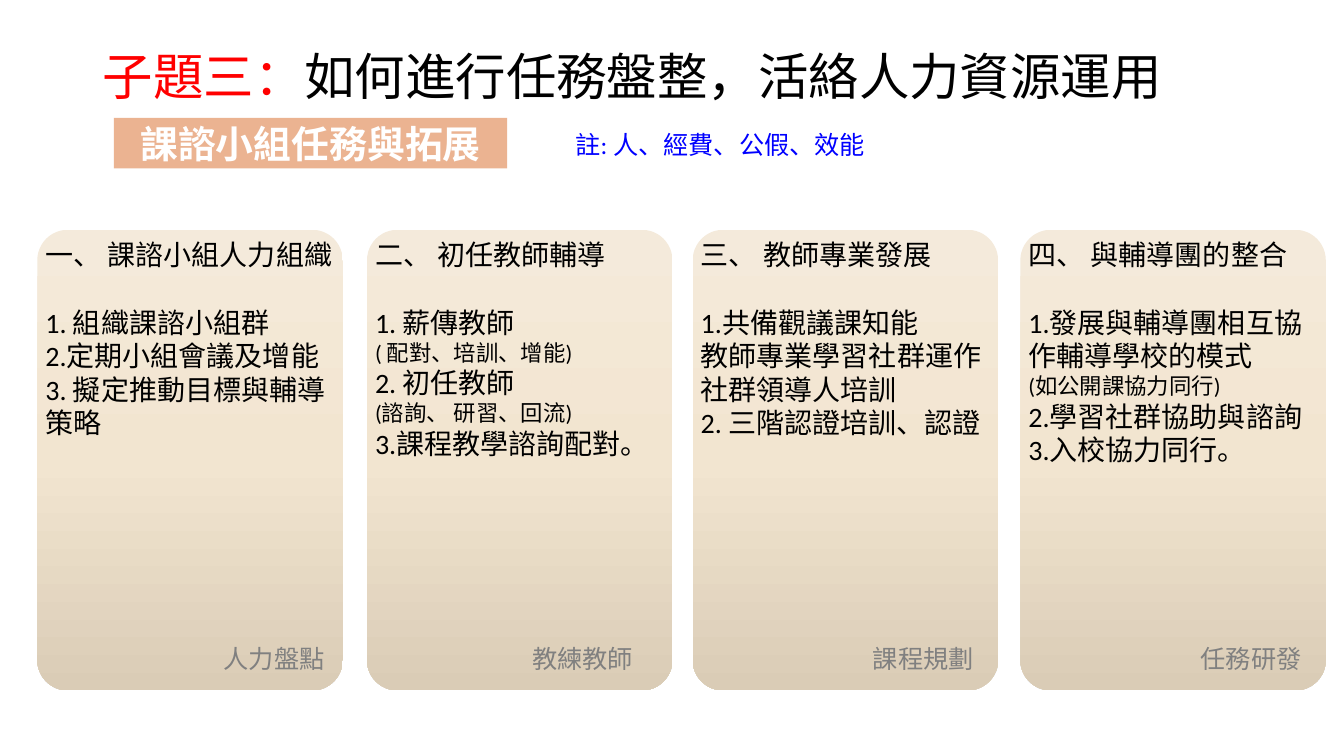
from dataclasses import dataclass
from lxml import etree
from pptx import Presentation
from pptx.dml.color import RGBColor
from pptx.enum.shapes import MSO_SHAPE as Preset
from pptx.enum.text import MSO_ANCHOR as Anchor, PP_ALIGN as Align
from pptx.oxml.ns import qn
from pptx.util import Inches, Pt


@dataclass(frozen=True)
class Theme:
    latin: str = "Calibri"
    accent_font: str = "Arial"
    banner_font: str = "Noto Sans CJK SC"
    title_size: int = 36
    banner_size: int = 27
    body_size: int = 20
    label_size: int = 18
    detail_size: int = 16
    heading_gap: int = 24
    black: str = "000000"
    red: str = "FF0000"
    white: str = "FFFFFF"
    blue: str = "0000FF"
    grey: str = "808080"
    banner: str = "EBB391"
    card_stops: tuple = ((0, "F4EADB"), (50, "F2E5D0"), (100, "DACCB6"))


class SlideBuilder:
    def __init__(self, presentation, theme):
        self.theme = theme
        self.slide = presentation.slides.add_slide(presentation.slide_layouts[5])

    def style(self, run, size, color, name=None, bold=False):
        run.font.size = Pt(size)
        run.font.name = name or self.theme.latin
        run.font.bold = bold
        run.font.color.rgb = RGBColor.from_string(color)

    def place(self, box):
        return [Inches(length) for length in box]

    def inset(self, frame, horizontal, vertical):
        frame.margin_left = frame.margin_right = Inches(horizontal)
        frame.margin_top = frame.margin_bottom = Inches(vertical)

    def title(self, box, lead, rest):
        shape = self.slide.shapes.title
        shape.left, shape.top, shape.width, shape.height = self.place(box)
        frame = shape.text_frame
        frame.vertical_anchor = Anchor.MIDDLE
        paragraph = frame.paragraphs[0]
        paragraph.alignment = Align.LEFT
        paragraph.line_spacing = 0.9
        theme = self.theme
        parts = ((lead, theme.red, theme.accent_font), (rest, theme.black, theme.latin))
        for text, color, name in parts:
            run = paragraph.add_run()
            run.text = text
            self.style(run, theme.title_size, color, name)

    def block(self, preset, box):
        shape = self.slide.shapes.add_shape(preset, *self.place(box))
        shape.shadow.inherit = False
        shape.line.fill.background()
        return shape

    def banner(self, box, text):
        theme = self.theme
        shape = self.block(Preset.RECTANGLE, box)
        shape.fill.solid()
        shape.fill.fore_color.rgb = RGBColor.from_string(theme.banner)
        frame = shape.text_frame
        self.inset(frame, 0.05, 0.02)
        frame.text = text
        paragraph = frame.paragraphs[0]
        paragraph.alignment = Align.CENTER
        self.style(paragraph.runs[0], theme.banner_size, theme.white, theme.banner_font, True)

    def label(self, box, text, color, wrap=False):
        frame = self.slide.shapes.add_textbox(*self.place(box)).text_frame
        frame.word_wrap = wrap
        frame.text = text
        self.style(frame.paragraphs[0].runs[0], self.theme.label_size, color)

    def card(self, box, lines):
        theme = self.theme
        shape = self.block(Preset.ROUNDED_RECTANGLE, box)
        shape.adjustments[0] = 0.1
        shape.fill.gradient()
        shape.fill.gradient_angle = 270
        stops = shape.fill._fill._gradFill.find(qn("a:gsLst"))
        for stop in list(stops):
            stops.remove(stop)
        for position, color in theme.card_stops:
            stop = etree.SubElement(stops, qn("a:gs"), pos=str(position * 1000))
            etree.SubElement(stop, qn("a:srgbClr"), val=color)

        left, top, width, _ = box
        text_box = self.slide.shapes.add_textbox(*self.place((left, top, width, 1.37)))
        frame = text_box.text_frame
        frame.word_wrap = True
        self.inset(frame, 0.08, 0.08)
        frame.text = "\n".join(lines)
        frame.paragraphs[0].space_after = Pt(theme.heading_gap)
        for paragraph in frame.paragraphs:
            detail = paragraph.text.startswith("(")
            size = theme.detail_size if detail else theme.body_size
            self.style(paragraph.runs[0], size, theme.black)


CARDS = (
    (0.37, 2.12, "人力盤點", (
        "一、 課諮小組人力組織",
        "1. 組織課諮小組群",
        "2.定期小組會議及增能",
        "3. 擬定推動目標與輔導策略",
    )),
    (3.64, 5.18, "教練教師", (
        "二、 初任教師輔導",
        "1. 薪傳教師",
        "( 配對、培訓、增能)",
        "2. 初任教師",
        "(諮詢、 研習、回流)",
        "3.課程教學諮詢配對。",
    )),
    (6.87, 8.56, "課程規劃", (
        "三、 教師專業發展",
        "1.共備觀議課知能",
        "教師專業學習社群運作",
        "社群領導人培訓",
        "2. 三階認證培訓、認證",
    )),
    (10.12, 11.81, "任務研發", (
        "四、 與輔導團的整合",
        "1.發展與輔導團相互協作輔導學校的模式",
        "(如公開課協力同行)",
        "2.學習社群協助與諮詢",
        "3.入校協力同行。",
    )),
)


def main():
    presentation = Presentation()
    presentation.slide_width = Inches(13.33)
    presentation.slide_height = Inches(7.5)
    theme = Theme()
    builder = SlideBuilder(presentation, theme)
    builder.title((0.92, 0.4, 11.5, 0.78), "子題三：", "如何進行任務盤整，活絡人力資源運用")
    builder.banner((1.13, 1.17, 3.9, 0.5), "課諮小組任務與拓展")
    for card_left, label_left, label, lines in CARDS:
        builder.card((card_left, 2.28, 3.03, 4.57), lines)
        builder.label((label_left, 6.33, 1.21, 0.4), label, theme.grey)
    builder.label((5.61, 1.23, 5.2, 0.4), "註: 人、經費、公假、效能", theme.blue, wrap=True)
    presentation.save("out.pptx")


if __name__ == "__main__":
    main()
